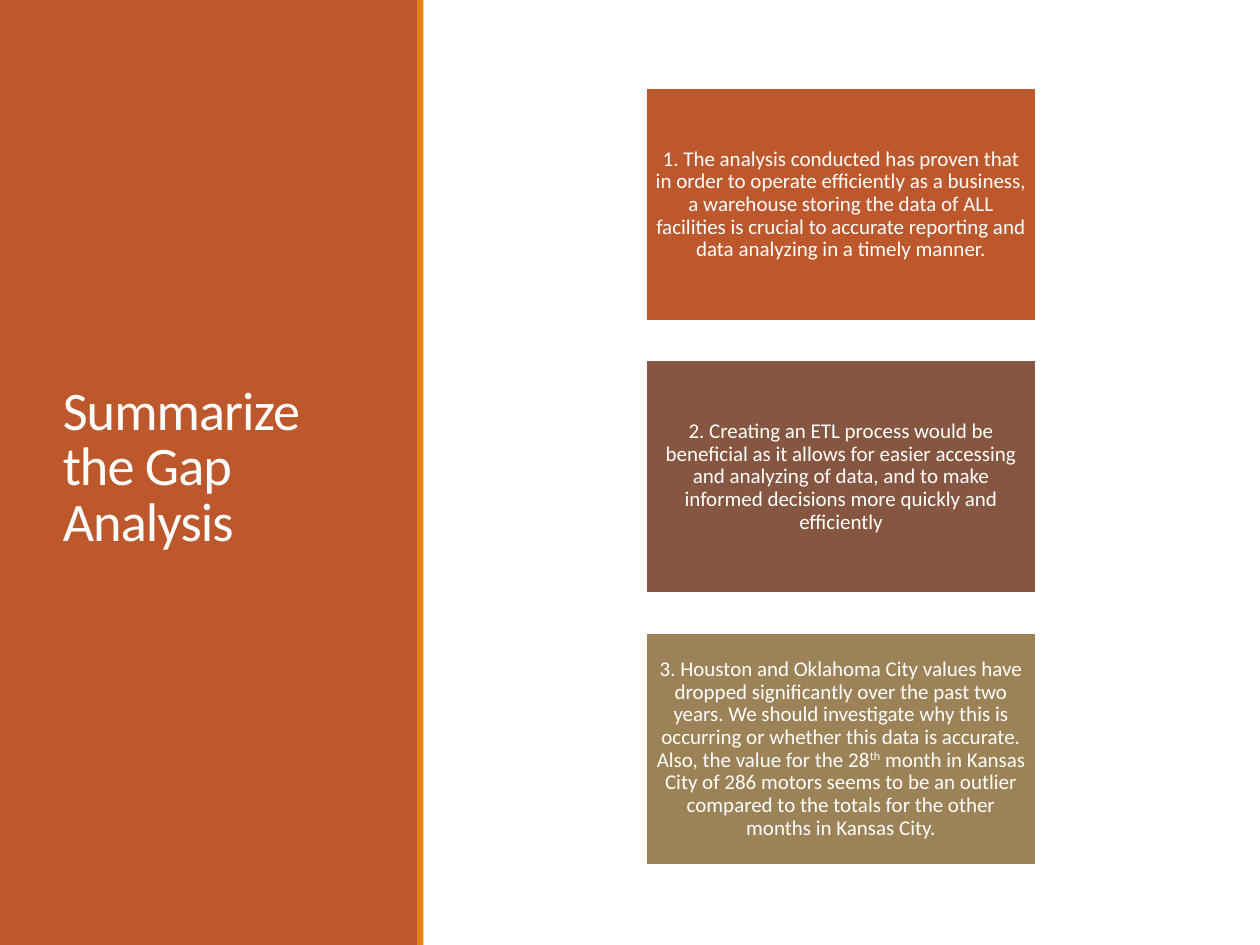
from dataclasses import dataclass

from pptx import Presentation
from pptx.dml.color import RGBColor
from pptx.enum.shapes import MSO_SHAPE
from pptx.enum.text import MSO_ANCHOR, PP_ALIGN
from pptx.util import Inches, Pt


@dataclass(frozen=True)
class Theme:
    font: str = "Calibri"
    white: str = "FFFFFF"
    rust: str = "BD582C"
    orange: str = "E48312"
    brown: str = "865640"
    olive: str = "9B8357"
    title_size: int = 31
    body_size: int = 12


theme = Theme()


def add_block(page, left, top, width, height, color):
    block = page.shapes.add_shape(
        MSO_SHAPE.RECTANGLE, Inches(left), Inches(top), Inches(width), Inches(height)
    )
    block.shadow.inherit = False
    block.fill.solid()
    block.fill.fore_color.rgb = RGBColor.from_string(color)
    block.line.fill.background()
    return block


def style_paragraph(para, size, align, spacing):
    para.alignment = align
    para.line_spacing = spacing
    para.font.name = theme.font
    para.font.size = Pt(size)
    para.font.color.rgb = RGBColor.from_string(theme.white)


deck = Presentation()
deck.slide_width = Inches(10)
deck.slide_height = Inches(7.5)
page = deck.slides.add_slide(deck.slide_layouts[6])

add_block(page, 0, 0, 3.32, 7.5, theme.rust)
add_block(page, 3.31, 0, 0.05, 7.5, theme.orange)

title = page.shapes.add_textbox(Inches(0.4), Inches(0.57), Inches(2.53), Inches(6.31))
title.text_frame.word_wrap = True
title.text_frame.vertical_anchor = MSO_ANCHOR.MIDDLE
para = title.text_frame.paragraphs[0]
span = para.add_run()
span.text = "Summarize the Gap Analysis"
span.font._element.set("spc", "-50")
style_paragraph(para, theme.title_size, PP_ALIGN.LEFT, 0.85)

findings = [
    (theme.rust, [
        ("1. The analysis conducted has proven that in order to operate efficiently "
         "as a business, a warehouse storing the data of ALL facilities is crucial to "
         "accurate reporting and data analyzing in a timely manner.", False),
    ]),
    (theme.brown, [
        ("2. Creating an ETL process would be beneficial as it allows for easier "
         "accessing and analyzing of data, and to make informed decisions more "
         "quickly and efficiently", False),
    ]),
    (theme.olive, [
        ("3. Houston and Oklahoma City values have dropped significantly over the past "
         "two years. We should investigate why this is occurring or whether this data "
         "is accurate. Also, the value for the 28", False),
        ("th", True),
        (" month in Kansas City of 286 motors seems to be an outlier compared to the "
         "totals for the other months in Kansas City.", False),
    ]),
]

card_top, card_pitch = 0.7, 2.16
for index, (color, pieces) in enumerate(findings):
    card = add_block(page, 5.13, card_top + index * card_pitch, 3.09, 1.85, color)
    card.line.color.rgb = RGBColor.from_string(theme.white)
    card.line.width = Pt(1.25)
    frame = card.text_frame
    frame.word_wrap = True
    frame.vertical_anchor = MSO_ANCHOR.MIDDLE
    frame.margin_left = frame.margin_right = Inches(0.05)
    frame.margin_top = frame.margin_bottom = Inches(0.05)
    para = frame.paragraphs[0]
    for text, raised in pieces:
        span = para.add_run()
        span.text = text
        if raised:
            span.font._element.set("baseline", "30000")
    style_paragraph(para, theme.body_size, PP_ALIGN.CENTER, 0.9)

deck.save("out.pptx")
